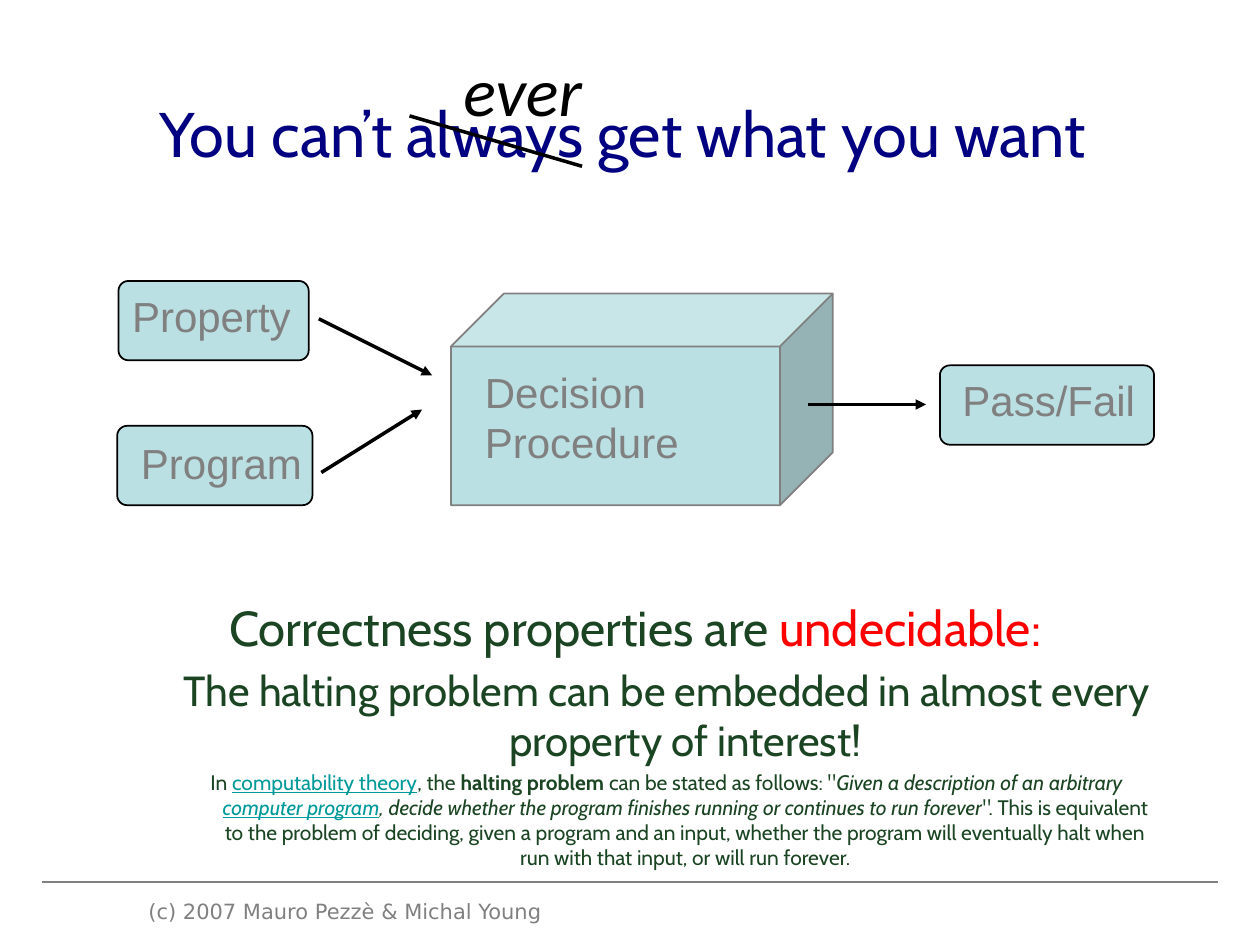
from lxml.etree import SubElement
from pptx import Presentation
from pptx.dml.color import RGBColor
from pptx.enum.shapes import MSO_CONNECTOR, MSO_SHAPE
from pptx.enum.text import MSO_ANCHOR, PP_ALIGN
from pptx.oxml.ns import qn
from pptx.util import Inches, Pt

GREY, BLACK, NAVY = "808080", "000000", "000080"
GREEN, RED, TEAL, PALE = "1A4422", "FF0000", "009999", "BBE0E3"

# Content: a run is (text, style), style holds only what differs
TITLE = "You can’t always get what you want "
LINK = {"color": TEAL, "line": True}
# Body paragraphs: size, level, left margin, space before, runs
BODY = [
    (28, 0, 0.37, 0, [("Correctness properties are ", {}),
                      ("undecidable:", {"color": RED})]),
    (24, 1, 0.8, 4.8, [("The halting problem can be embedded in almost every "
                        "property of interest!", {})]),
    (12, 1, 0.8, 2.4, [
        ("In ", {}),
        ("computability theory", LINK),
        (", the ", {}),
        ("halting problem", {"bold": True}),
        (" can be stated as follows: \"", {}),
        ("Given a description of an arbitrary ", {"slant": True}),
        ("computer program", {**LINK, "slant": True}),
        (", decide whether the program finishes running or continues "
         "to run forever", {"slant": True}),
        ("\". This is equivalent to the problem of deciding, given a program "
         "and an input, whether the program will eventually halt when run "
         "with that input, or will run forever.", {})]),
]
# Diagram nodes: preset, corner, edge, box, label box, label lines
ROUND = MSO_SHAPE.ROUNDED_RECTANGLE
NODES = [
    (MSO_SHAPE.CUBE, 0.25, GREY, (3.58, 2.33, 3.03, 1.68),
     (3.75, 2.86, 1.74, 0.9), ["Decision", "Procedure"]),
    (ROUND, 0.125, BLACK, (0.94, 2.23, 1.51, 0.63),
     (0.95, 2.26, 1.46, 0.5), ["Property"]),
    (ROUND, 0.125, BLACK, (0.93, 3.38, 1.55, 0.63),
     (1.02, 3.42, 1.48, 0.5), ["Program"]),
    (ROUND, 0.125, BLACK, (7.46, 2.9, 1.7, 0.63),
     (7.54, 2.92, 1.57, 0.5), ["Pass/Fail"]),
]
ARROWS = [(2.53, 2.53, 3.43, 2.98), (2.55, 3.75, 3.35, 3.25),
          (6.41, 3.21, 7.35, 3.21)]
STRIKE = (3.25, 0.92, 4.62, 1.32)
RULE = (0.33, 7, 9.67, 7)

deck = Presentation()
deck.slide_width, deck.slide_height = Inches(10), Inches(7.5)
slide = deck.slides.add_slide(deck.slide_layouts[6])
shapes = slide.shapes


def rgb(code):
    return RGBColor.from_string(code)


def add_run(para, text, size, face, color, bold=False, slant=False, line=False):
    run = para.add_run()
    run.text = text
    font = run.font
    font.size, font.name = Pt(size), face
    font.bold, font.italic, font.underline = bold, slant, line
    font.color.rgb = rgb(color)


def add_box(area, wrap=False):
    frame = shapes.add_textbox(*map(Inches, area)).text_frame
    frame.word_wrap = wrap
    return frame


def add_lines(area, lines, size, face, color, **style):
    frame = add_box(area)
    for i, text in enumerate(lines):
        para = frame.add_paragraph() if i else frame.paragraphs[0]
        add_run(para, text, size, face, color, **style)


def add_line(ends, color, width, head=False):
    line = shapes.add_connector(MSO_CONNECTOR.STRAIGHT, *map(Inches, ends))
    line.line.color.rgb = rgb(color)
    line.line.width = Pt(width)
    props = line._element.spPr
    if head:
        SubElement(props.find(qn("a:ln")), qn("a:tailEnd"), type="triangle")
    SubElement(props, qn("a:effectLst"))


# Footer
add_line(RULE, GREY, 0.75)
add_lines((1.08, 7.08, 3.5, 0.27), ["(c) 2007 Mauro Pezzè & Michal Young"],
          12, "DejaVu Sans", GREY)

# Title
frame = add_box((0.5, 0.6, 9, 0.9), wrap=True)
frame.vertical_anchor = MSO_ANCHOR.MIDDLE
para = frame.paragraphs[0]
para.alignment = PP_ALIGN.CENTER
add_run(para, TITLE, 36, "Cabin", NAVY)

# Body with hanging indents
frame = add_box((0.79, 4.69, 8.5, 2.14), wrap=True)
for i, (size, level, left, gap, runs) in enumerate(BODY):
    para = frame.add_paragraph() if i else frame.paragraphs[0]
    para.alignment, para.level = PP_ALIGN.CENTER, level
    para.space_before = Pt(gap)
    hang = 0.3 if level else left
    props = para._p.get_or_add_pPr()
    props.set("marL", str(int(Inches(left))))
    props.set("indent", str(int(Inches(-hang))))
    for text, style in runs:
        add_run(para, text, size, "Cabin", **{"color": GREEN, **style})

# Diagram: shapes, then labels, then arrows
for kind, corner, edge, area, spot, lines in NODES:
    node = shapes.add_shape(kind, *map(Inches, area))
    node.adjustments[0] = corner
    node.shadow.inherit = False
    node.fill.solid()
    node.fill.fore_color.rgb = rgb(PALE)
    node.line.color.rgb = rgb(edge)
    node.line.width = Pt(1)
    add_lines(spot, lines, 24, "Arial", GREY)
for ends in ARROWS:
    add_line(ends, BLACK, 2, head=True)

# Correction over the title
add_line(STRIKE, BLACK, 2)
add_lines((3.58, 0.33, 1.25, 0.75), ["ever"], 39, "Calibri", BLACK, slant=True)

deck.save("out.pptx")
